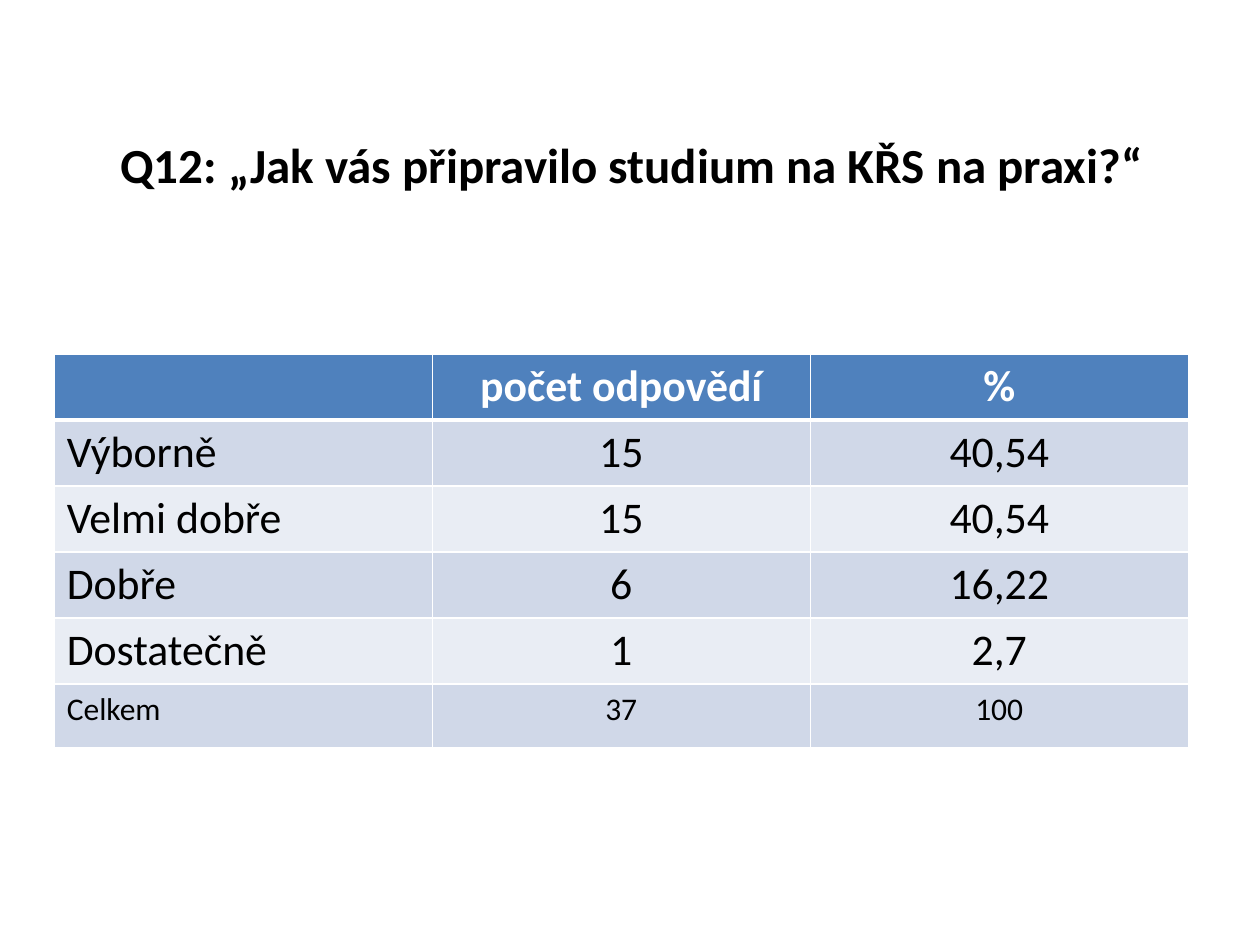
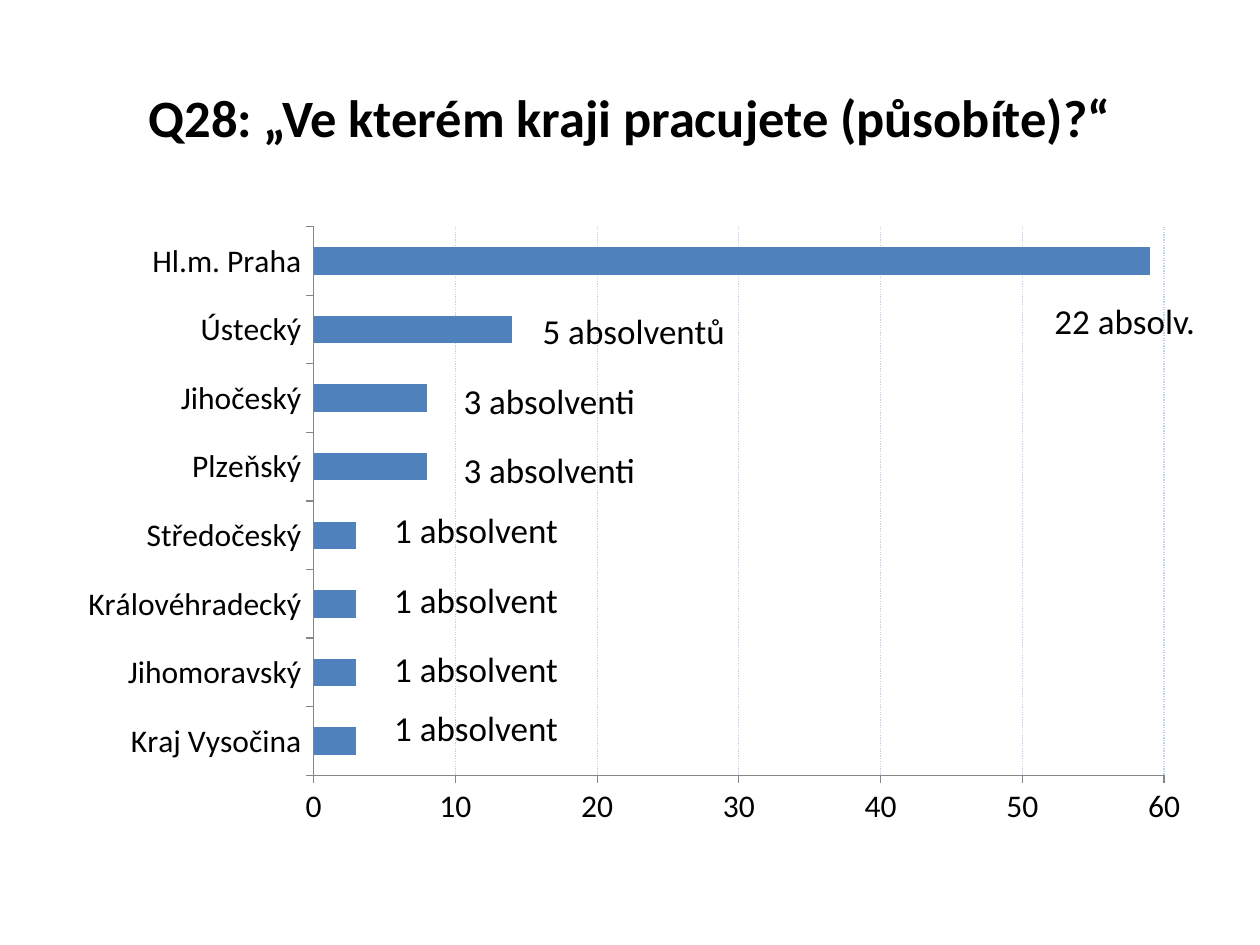
from dataclasses import dataclass

from lxml import etree
from pptx import Presentation
from pptx.chart.data import CategoryChartData as Data
from pptx.dml.color import RGBColor as Rgb
from pptx.enum.chart import XL_CHART_TYPE as Kind, XL_TICK_MARK as Tick
from pptx.enum.dml import MSO_LINE as Dash
from pptx.enum.text import MSO_ANCHOR as Anchor, PP_ALIGN as Align
from pptx.oxml import parse_xml
from pptx.oxml.ns import nsdecls, qn
from pptx.util import Pt

# Shared style
FONT = "Calibri"
BLACK, WHITE, BLUE = "000000", "FFFFFF", "4F81BD"
BANDS = ("D0D8E8", "E9EDF4")
GRID, AXIS = "C2D1ED", "868686"


@dataclass
class Box:
    left: float
    top: float
    width: float
    height: float

    def pts(self) -> tuple:
        return Pt(self.left), Pt(self.top), Pt(self.width), Pt(self.height)


@dataclass
class Note:
    text: str
    left: float
    top: float
    width: float = 124.5


# Content
ROWS = [
    ("", "počet odpovědí", "%"),
    ("Výborně", "15", "40,54"),
    ("Velmi dobře", "15", "40,54"),
    ("Dobře", "6", "16,22"),
    ("Dostatečně", "1", "2,7"),
    ("Celkem", "37", "100"),
]
REGIONS = {
    "Kraj Vysočina": 3,
    "Jihomoravský": 3,
    "Královéhradecký": 3,
    "Středočeský": 3,
    "Plzeňský": 8,
    "Jihočeský": 8,
    "Ústecký": 14,
    "Hl.m. Praha": 59,
}
NOTES = [
    Note("5 absolventů", 303, 173.5, 130.5),
    Note("22 absolv.", 595.5, 167.8),
    *(Note("3 absolventi", 257.8, top) for top in (213.1, 252.7)),
    *(Note("1 absolvent", 218.2, top) for top in (287.3, 326.9, 366.5, 400.3)),
]


def color(code: str) -> Rgb:
    return Rgb.from_string(code)


def style(font, size: float, code: str = BLACK, bold: bool = False) -> None:
    font.name, font.size, font.bold = FONT, Pt(size), bold
    font.color.rgb = color(code)


def add_page(deck, text: str, box: Box, size: float):
    page = deck.slides.add_slide(deck.slide_layouts[5])
    title = page.shapes.title
    title.left, title.top, title.width, title.height = box.pts()
    frame = title.text_frame
    frame.text = text
    frame.vertical_anchor = Anchor.MIDDLE
    para = frame.paragraphs[0]
    para.alignment = Align.CENTER
    style(para.font, size, bold=True)
    return page


def edge(cell, top: float, bottom: float) -> None:
    """Draw white borders; the line elements come before the fill."""
    props = cell._tc.get_or_add_tcPr()
    sides = {"L": 1, "R": 1, "T": top, "B": bottom}
    for spot, (side, width) in enumerate(sides.items()):
        props.insert(spot, parse_xml(
            f'<a:ln{side} {nsdecls("a")} w="{Pt(width)}"><a:solidFill>'
            f'<a:srgbClr val="{WHITE}"/></a:solidFill></a:ln{side}>'))


def add_grid(page, box: Box) -> None:
    last = len(ROWS) - 1
    table = page.shapes.add_table(len(ROWS), len(ROWS[0]), *box.pts()).table
    for r, row in enumerate(ROWS):
        head = r == 0
        for c, text in enumerate(row):
            cell = table.cell(r, c)
            cell.text = text
            cell.fill.solid()
            cell.fill.fore_color.rgb = color(BLUE if head else BANDS[(r - 1) % 2])
            edge(cell, 3 if r == 1 else 1, 3 if head else 1)
            para = cell.text_frame.paragraphs[0]
            para.alignment = Align.CENTER if c else Align.LEFT
            style(para.font, 18 if r == last else 25, WHITE if head else BLACK, head)


def place_plot(chart, x: float, y: float, w: float, h: float) -> None:
    """Fix the inner plot area, in parts of the chart's size."""
    area = chart._chartSpace.chart.plotArea
    for old in area.findall(qn("c:layout")):
        area.remove(old)
    layout = etree.Element(qn("c:layout"))
    manual = etree.SubElement(layout, qn("c:manualLayout"))
    marks = {"layoutTarget": "inner", "xMode": "edge", "yMode": "edge",
             "x": x, "y": y, "w": w, "h": h}
    for tag, val in marks.items():
        etree.SubElement(manual, qn(f"c:{tag}"), val=str(val))
    area.insert(0, layout)


def add_bars(page, box: Box) -> None:
    data = Data()
    data.categories = list(REGIONS)
    data.add_series("Series 1", list(REGIONS.values()))
    chart = page.shapes.add_chart(Kind.BAR_CLUSTERED, *box.pts(), data).chart
    chart.has_legend = chart.has_title = False
    style(chart.font, 18)
    place_plot(chart, 0.22, 0.02, 0.75, 0.88)

    plot = chart.plots[0]
    plot.gap_width = 150
    plot.vary_by_categories = False
    fill = plot.series[0].format.fill
    fill.solid()
    fill.fore_color.rgb = color(BLUE)

    # Axes and grid
    scale = chart.value_axis
    for axis in (chart.category_axis, scale):
        axis.major_tick_mark = Tick.OUTSIDE
        axis.minor_tick_mark = Tick.NONE
        axis.format.line.color.rgb = color(AXIS)
        axis.format.line.width = Pt(0.75)
    scale.minimum_scale, scale.maximum_scale, scale.major_unit = 0, 60, 10
    scale.has_major_gridlines = True
    line = scale.major_gridlines.format.line
    line.color.rgb = color(GRID)
    line.width = Pt(0.75)
    line.dash_style = Dash.ROUND_DOT


def add_note(page, note: Note) -> None:
    box = Box(note.left, note.top, note.width, 31.5)
    frame = page.shapes.add_textbox(*box.pts()).text_frame
    frame.word_wrap = True
    frame.text = note.text
    style(frame.paragraphs[0].font, 20)


def main() -> None:
    deck = Presentation()
    deck.slide_width, deck.slide_height = Pt(720), Pt(540)

    # Table of answers
    page = add_page(deck, "Q12: „Jak vás připravilo studium na KŘS na praxi?“",
                    Box(36.7, 54.7, 648, 78.5), 28)
    add_grid(page, Box(31, 202.3, 648, 220.3))

    # Chart of regions
    page = add_page(deck, "Q28: „Ve kterém kraji pracujete (působíte)?“",
                    Box(36, 21.6, 648, 90), 30)
    add_bars(page, Box(36.7, 122.4, 648, 356.4))
    for note in NOTES:
        add_note(page, note)

    deck.save("out.pptx")


if __name__ == "__main__":
    main()
